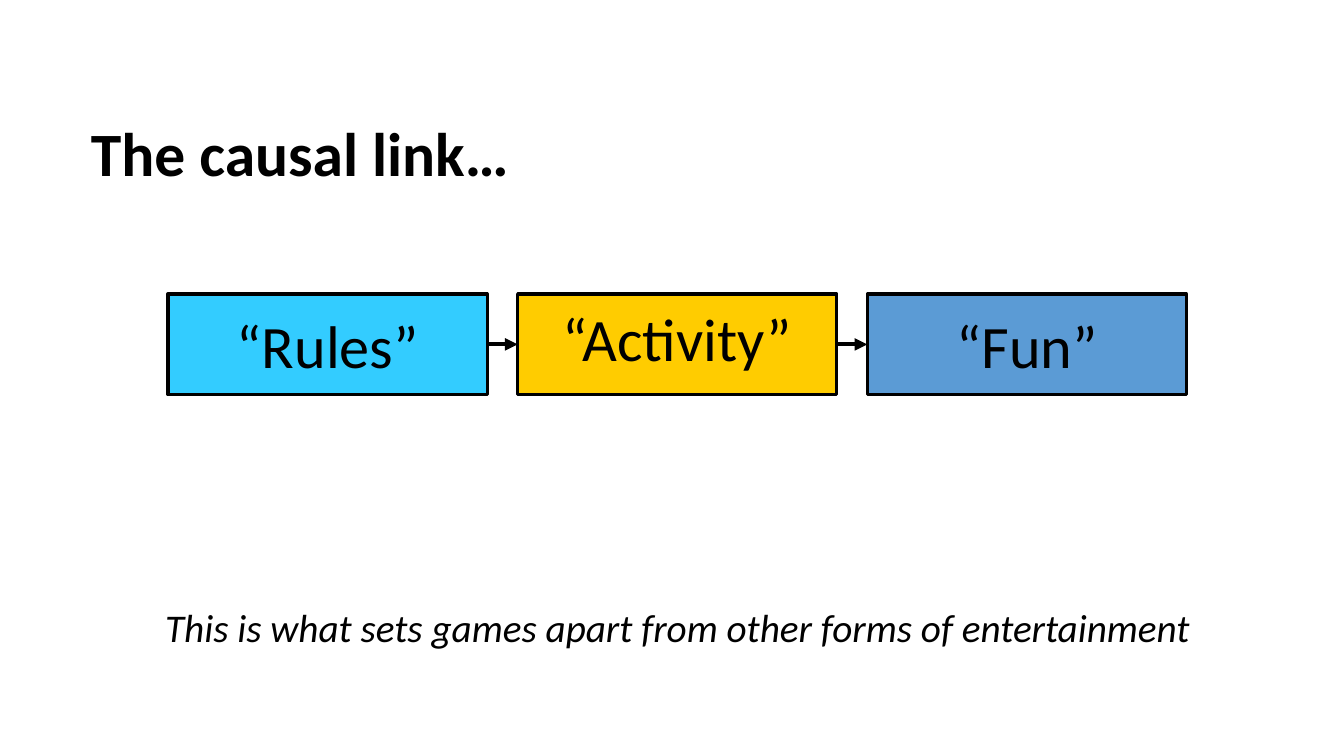
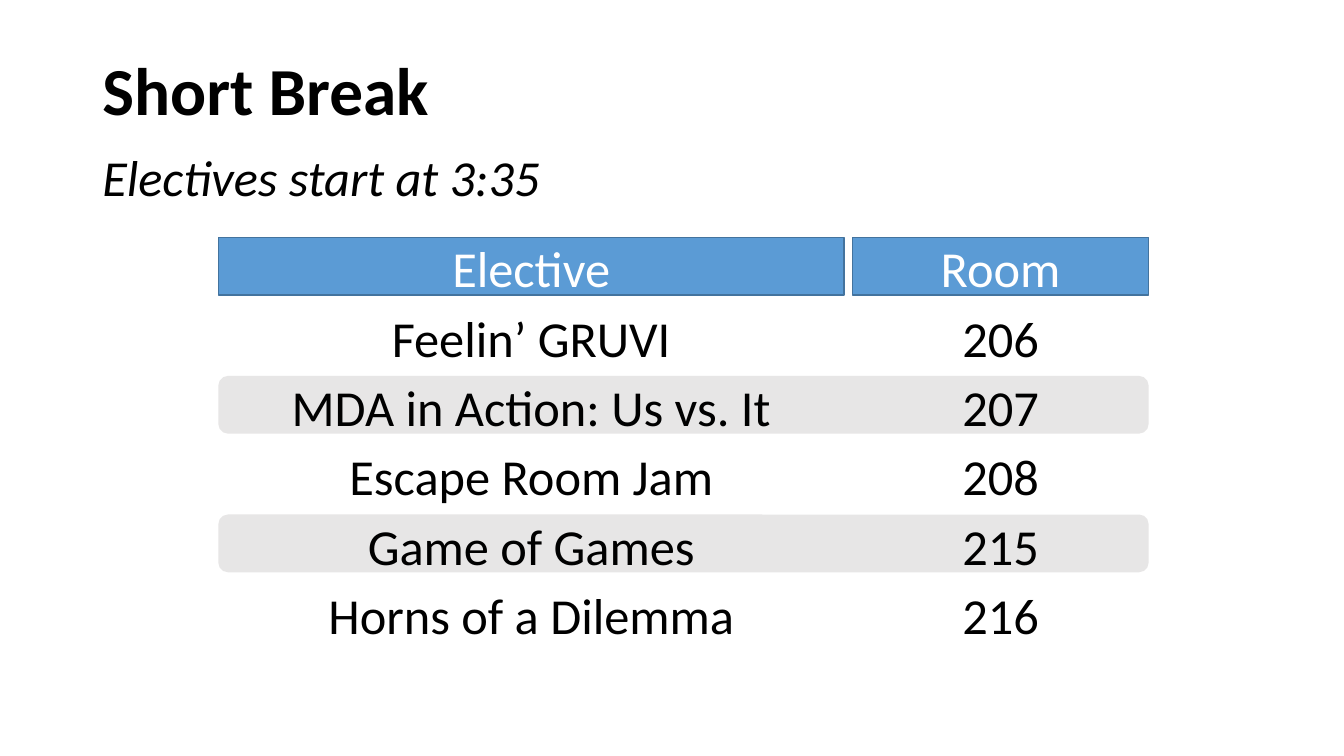
from dataclasses import dataclass
from itertools import pairwise

from lxml.etree import SubElement
from pptx import Presentation
from pptx.dml.color import RGBColor
from pptx.enum.shapes import MSO_CONNECTOR, MSO_SHAPE
from pptx.enum.text import MSO_ANCHOR, MSO_AUTO_SIZE, PP_ALIGN
from pptx.oxml.ns import qn
from pptx.util import Pt

EMU_PER_PX = 9525
TITLE_ONLY = 5
RIGHT_SIDE, LEFT_SIDE = 3, 1
PLAIN_TABLE = "{2D5ABB26-0587-4C30-8999-92F81FD0307C}"


@dataclass(frozen=True)
class Theme:
    font: str = "Calibri"
    black: str = "000000"
    white: str = "FFFFFF"
    cyan: str = "33CCFF"
    yellow: str = "FFCC00"
    blue: str = "5B9BD5"
    blue_edge: str = "43739E"
    band: str = "E7E6E6"
    box_size: int = 43
    tagline_size: int = 28
    table_size: int = 36
    tight: float = 0.9


T = Theme()


def px(n):
    return n * EMU_PER_PX


def rgb(color):
    return RGBColor.from_string(color)


def write(tf, text, size, color=T.black, align=PP_ALIGN.LEFT, spacing=None,
          bold=False, italic=False):
    p = tf.paragraphs[0]
    p.alignment = align
    p.line_spacing = spacing
    r = p.add_run()
    r.text = text
    r.font.name = T.font
    r.font.size = Pt(size)
    r.font.color.rgb = rgb(color)
    r.font.bold = bold
    r.font.italic = italic


def add_titled_slide(prs, text, box, size, spacing=None):
    s = prs.slides.add_slide(prs.slide_layouts[TITLE_ONLY])
    title = s.shapes.title
    title.left, title.top, title.width, title.height = map(px, box)
    tf = title.text_frame
    tf.vertical_anchor = MSO_ANCHOR.TOP
    tf.auto_size = MSO_AUTO_SIZE.NONE
    write(tf, text, size, spacing=spacing, bold=True)
    return s


def add_caption(s, text, box, size, align=PP_ALIGN.LEFT):
    tf = s.shapes.add_textbox(*map(px, box)).text_frame
    tf.word_wrap = True
    write(tf, text, size, align=align, spacing=T.tight, italic=True)


def add_block(s, box, fill, edge=None, edge_width=1, kind=MSO_SHAPE.RECTANGLE):
    sp = s.shapes.add_shape(kind, *map(px, box))
    sp.shadow.inherit = False
    sp.fill.solid()
    sp.fill.fore_color.rgb = rgb(fill)
    if edge:
        sp.line.color.rgb = rgb(edge)
        sp.line.width = Pt(edge_width)
    else:
        sp.line.fill.background()
    return sp


def add_step(s, box, text, fill, spacing):
    sp = add_block(s, box, fill, T.black, 2.25)
    tf = sp.text_frame
    tf.word_wrap = False
    tf.vertical_anchor = MSO_ANCHOR.MIDDLE
    tf.margin_left = tf.margin_right = px(13)
    tf.margin_top = tf.margin_bottom = px(7)
    write(tf, text, T.box_size, align=PP_ALIGN.CENTER, spacing=spacing)
    return sp


def add_arrow(s, source, target):
    c = s.shapes.add_connector(MSO_CONNECTOR.STRAIGHT, 0, 0, 0, 0)
    c.begin_connect(source, RIGHT_SIDE)
    c.end_connect(target, LEFT_SIDE)
    c.line.color.rgb = rgb(T.black)
    c.line.width = Pt(3)
    SubElement(c.line._get_or_add_ln(), qn("a:tailEnd"), type="triangle")
    SubElement(c._element.spPr, qn("a:effectLst"))


def add_schedule(s, rows):
    """Table on separate header blocks and rounded bands behind every second row."""
    left, top, pitch, height = 208, 226, 66, 55
    widths, gap = (596, 282), 8
    total = sum(widths) + gap

    for x, width in zip((left, left + widths[0] + gap), widths):
        add_block(s, (x, top, width, height), T.blue, T.blue_edge)
    for i in range(2, len(rows), 2):
        add_block(s, (left, top + i * pitch, total, height), T.band,
                  kind=MSO_SHAPE.ROUNDED_RECTANGLE)

    table = s.shapes.add_table(len(rows), len(widths), px(left), px(top),
                               px(total), px(pitch * len(rows))).table
    table.horz_banding = False
    table._tbl.tblPr.find(qn("a:tableStyleId")).text = PLAIN_TABLE
    table.columns[0].width = px(widths[0] + gap)
    table.columns[1].width = px(widths[1])
    for i, row in enumerate(rows):
        table.rows[i].height = px(pitch)
        for j, text in enumerate(row):
            cell = table.cell(i, j)
            cell.fill.background()
            cell.margin_left = cell.margin_bottom = 0
            cell.margin_right = px(gap if j == 0 else 0)
            cell.margin_top = px(6)
            write(cell.text_frame, text, T.table_size,
                  T.black if i else T.white, PP_ALIGN.CENTER, T.tight)


def build_causal_link(prs):
    s = add_titled_slide(prs, "The causal link…", (77, 105, 448, 81), 44)
    steps = [
        ("“Rules”", T.cyan, None),
        ("“Activity”", T.yellow, 0.8),
        ("“Fun”", T.blue, None),
    ]
    boxes = [add_step(s, (160 + i * 333, 280, 304, 96), *step)
             for i, step in enumerate(steps)]
    for source, target in pairwise(boxes):
        add_arrow(s, source, target)
    add_caption(s, "This is what sets games apart from other forms of entertainment",
                (93, 575, 1104, 80), T.tagline_size, PP_ALIGN.CENTER)


def build_short_break(prs):
    s = add_titled_slide(prs, "Short Break", (88, 50, 1104, 88), 48, T.tight)
    add_caption(s, "Electives start at 3:35", (88, 141, 1104, 80), T.table_size)
    add_schedule(s, [
        ("Elective", "Room"),
        ("Feelin’ GRUVI", "206"),
        ("MDA in Action: Us vs. It", "207"),
        ("Escape Room Jam", "208"),
        ("Game of Games", "215"),
        ("Horns of a Dilemma", "216"),
    ])


def main():
    prs = Presentation()
    prs.slide_width, prs.slide_height = px(1280), px(720)
    build_causal_link(prs)
    build_short_break(prs)
    prs.save("out.pptx")


if __name__ == "__main__":
    main()
